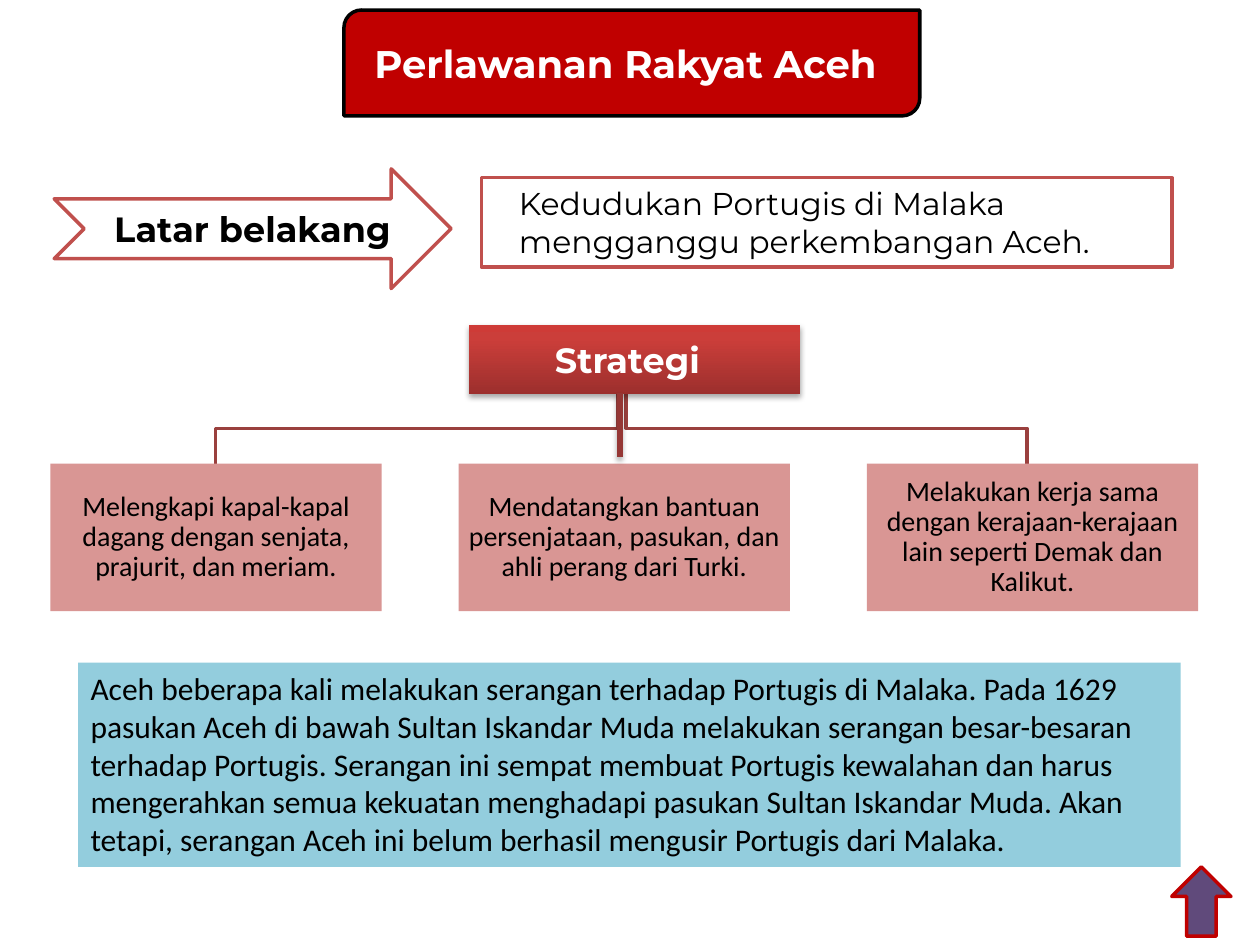
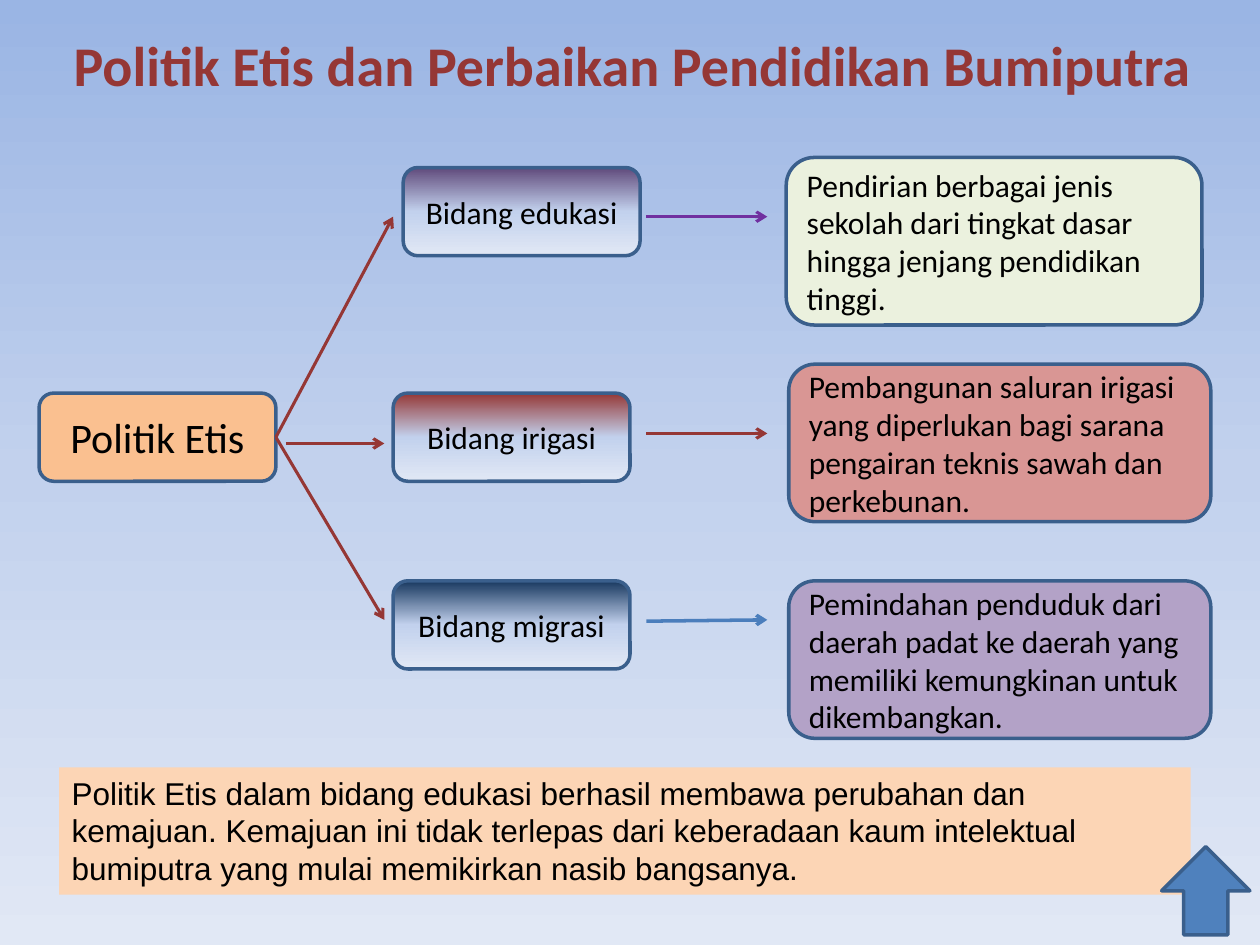
"""Build two history slides: the Aceh resistance and the Ethical Policy."""
from dataclasses import dataclass, field
from typing import Any, NamedTuple

from lxml import etree
from pptx import Presentation
from pptx.dml.color import RGBColor
from pptx.enum.shapes import MSO_CONNECTOR, MSO_SHAPE
from pptx.enum.text import MSO_ANCHOR, PP_ALIGN
from pptx.oxml.ns import qn
from pptx.util import Inches, Pt

RECT = MSO_SHAPE.RECTANGLE
ROUNDED = MSO_SHAPE.ROUNDED_RECTANGLE
DIAGONAL = MSO_SHAPE.ROUND_2_DIAG_RECTANGLE
NOTCHED = MSO_SHAPE.NOTCHED_RIGHT_ARROW
UP_ARROW = MSO_SHAPE.UP_ARROW
STRAIGHT = MSO_CONNECTOR.STRAIGHT
CENTER, LEFT = PP_ALIGN.CENTER, PP_ALIGN.LEFT
MIDDLE, TOP = MSO_ANCHOR.MIDDLE, MSO_ANCHOR.TOP
RIGHT_SIDE = 3
WIDTH, HEIGHT = Inches(10), Inches(7.5)
COLUMNS, ROWS = 100, 75
UPWARD, DOWNWARD = 90, 270


@dataclass(frozen=True)
class Theme:
    """Colours, fonts and type sizes."""

    white: str = "FFFFFF"
    black: str = "000000"
    crimson: str = "C00000"
    brick: str = "C0504D"
    branch: str = "9A403E"
    maroon: str = "953735"
    rose: str = "D99694"
    aqua: str = "93CDDD"
    plum: str = "604A7B"
    lilac: str = "B3A2C7"
    violet: str = "7030A0"
    navy: str = "17375E"
    steel: str = "3A5F8C"
    blue: str = "4F81BD"
    sky: str = "4B7EBC"
    leaf: str = "EBF1DE"
    peach: str = "FCD5B5"
    apricot: str = "FAC090"
    mist: tuple = ((50, "C2D1ED"), (100, "E1E8F5"))
    dusk: str = "9AB5E4"
    ember: tuple = ((0, "9C2F2D"), (80, "CB3E3A"), (100, "CE3B37"))
    display: str = "Montserrat"
    body: str = "Calibri"
    plain: str = "Arial"
    title: int = 32
    root: int = 24
    banner: int = 22
    heading: int = 20
    copy: int = 18
    card: int = 16


THEME = Theme()
LABEL = dict(align=CENTER, anchor=MIDDLE)
HEADING = dict(LABEL, size=THEME.heading, font=THEME.display, bold=True)
CARD = dict(LABEL, size=THEME.card, spacing=0.9, inset=0.01)


@dataclass(frozen=True)
class Box:
    """A filled shape placed on the grid, with optional text."""

    col: float
    row: float
    cols: float
    rows: float
    fill: Any
    text: str = ""
    line: str = ""
    preset: Any = RECT
    angle: int = DOWNWARD
    style: dict = field(default_factory=dict)


class Link(NamedTuple):
    """A straight line between two grid points."""

    start: tuple
    end: tuple
    color: str
    weight: float = 1.75
    arrow: bool = True


class Topic(NamedTuple):
    """A policy field, its result and the arrow between them."""

    label: Box
    result: Box
    link: Link


def x(cols: float) -> int:
    """Turn grid columns into a length."""
    return round(WIDTH * cols / COLUMNS)


def y(rows: float) -> int:
    """Turn grid rows into a length."""
    return round(HEIGHT * rows / ROWS)


def rgb(color: str) -> RGBColor:
    """Read a hexadecimal colour."""
    return RGBColor.from_string(color)


def paint(fill, owner, color, angle: int = DOWNWARD) -> None:
    """Fill with one colour or with (percent, colour) stops."""
    if isinstance(color, str):
        fill.solid()
        fill.fore_color.rgb = rgb(color)
        return
    fill.gradient()
    fill.gradient_angle = angle
    stops = next(owner.iter(qn("a:gsLst")))
    stops[:] = []
    for percent, shade in color:
        stop = etree.SubElement(stops, qn("a:gs"), pos=str(percent * 1000))
        etree.SubElement(stop, qn("a:srgbClr"), val=shade)


def outline(line, color: str, weight: float = 2) -> None:
    """Set the colour and weight of a line."""
    line.color.rgb = rgb(color)
    line.width = Pt(weight)


def cast_shadow(effects) -> None:
    """Add a soft shadow below."""
    shadow = etree.SubElement(effects, qn("a:outerShdw"), blurRad=str(Pt(3.1)),
                              dist=str(Pt(1.8)), dir="5400000", rotWithShape="0")
    color = etree.SubElement(shadow, qn("a:srgbClr"), val=THEME.black)
    etree.SubElement(color, qn("a:alpha"), val="35000")


def write(frame, text: str, *, size: int = THEME.copy, font: str = THEME.body,
          color: str = THEME.black, bold: bool = False, align=LEFT, anchor=TOP,
          spacing: float = 1, inset: float | None = None,
          margin_right: float | None = None, indent: float = 0) -> None:
    """Write one formatted paragraph into a text frame."""
    frame.word_wrap = True
    frame.vertical_anchor = anchor
    if inset is not None:
        frame.margin_left = frame.margin_right = Inches(inset)
        frame.margin_top = frame.margin_bottom = Inches(inset)
    if margin_right is not None:
        frame.margin_right = x(margin_right)
    paragraph = frame.paragraphs[0]
    paragraph.alignment = align
    paragraph.line_spacing = spacing
    if indent:
        paragraph._p.get_or_add_pPr().set("marL", str(x(indent)))
    run = paragraph.add_run()
    run.text = text
    run.font.size, run.font.name, run.font.bold = Pt(size), font, bold
    run.font.color.rgb = rgb(color)


def draw_box(slide, box: Box):
    """Draw a box and its text."""
    shape = slide.shapes.add_shape(box.preset, x(box.col), y(box.row),
                                   x(box.cols), y(box.rows))
    shape.shadow.inherit = False
    paint(shape.fill, shape.element, box.fill, box.angle)
    if box.line:
        outline(shape.line, box.line)
    else:
        shape.line.fill.background()
    if box.text:
        write(shape.text_frame, box.text, **box.style)
    return shape


def draw_link(slide, link: Link):
    """Draw a straight line or arrow and return it with its effect list."""
    connector = slide.shapes.add_connector(
        STRAIGHT, x(link.start[0]), y(link.start[1]), x(link.end[0]), y(link.end[1]))
    outline(connector.line, link.color, link.weight)
    if link.arrow:
        etree.SubElement(connector.line._get_or_add_ln(), qn("a:tailEnd"), type="arrow")
    effects = etree.SubElement(connector.element.spPr, qn("a:effectLst"))
    return connector, effects


def draw_branch(slide, stem: float, target: float) -> None:
    """Draw a stepped line from the strategy heading to a card."""
    top, bend, bottom = y(31.3), y(34), y(36.8)
    builder = slide.shapes.build_freeform(x(stem), top)
    builder.add_line_segments([(x(stem), bend), (x(target), bend), (x(target), bottom)],
                              close=False)
    branch = builder.convert_to_shape()
    branch.shadow.inherit = False
    branch.fill.background()
    outline(branch.line, THEME.branch)


def build_aceh(slide) -> None:
    """Build the slide on the resistance of Aceh."""
    banner = Box(27.3, 0.8, 45.7, 8.4, THEME.crimson, "Perlawanan Rakyat Aceh",
                 THEME.black, DIAGONAL,
                 style=dict(HEADING, size=THEME.banner, color=THEME.white, margin_right=2))
    cause = Box(38.2, 14.1, 54.8, 7.1, THEME.white,
                "Kedudukan Portugis di Malaka mengganggu perkembangan Aceh.",
                THEME.brick, style=dict(font=THEME.display, indent=2))
    background = Box(4.3, 13.4, 31.5, 9.5, THEME.white, "Latar belakang",
                     THEME.brick, NOTCHED, style=HEADING)
    for box in (banner, cause, background):
        draw_box(slide, box)

    for stem, target in ((49, 17.1), (49.7, 81.5)):
        draw_branch(slide, stem, target)
    strategy = draw_box(slide, Box(
        37.2, 25.8, 26.3, 5.5, THEME.ember, "Strategi", angle=UPWARD,
        style=dict(HEADING, color=THEME.white, inset=0.01, margin_right=1.2)))
    cast_shadow(next(strategy.element.iter(qn("a:effectLst"))))

    strategies = (
        "Melengkapi kapal-kapal dagang dengan senjata, prajurit, dan meriam.",
        "Mendatangkan bantuan persenjataan, pasukan, dan ahli perang dari Turki.",
        "Melakukan kerja sama dengan kerajaan-kerajaan lain seperti Demak dan Kalikut.",
    )
    first, step = 4, 32.4
    for place, text in enumerate(strategies):
        draw_box(slide, Box(first + place * step, 36.8, 26.3, 11.7, THEME.rose, text,
                            style=CARD))
    _, effects = draw_link(slide, Link((49.2, 31.2), (49.2, 36.3), THEME.maroon, 3, False))
    cast_shadow(effects)

    draw_box(slide, Box(
        6.2, 52.6, 87.5, 16.2, THEME.aqua,
        "Aceh beberapa kali melakukan serangan terhadap Portugis di Malaka. Pada 1629 "
        "pasukan Aceh di bawah Sultan Iskandar Muda melakukan serangan besar-besaran "
        "terhadap Portugis. Serangan ini sempat membuat Portugis kewalahan dan harus "
        "mengerahkan semua kekuatan menghadapi pasukan Sultan Iskandar Muda. Akan "
        "tetapi, serangan Aceh ini belum berhasil mengusir Portugis dari Malaka."))
    draw_box(slide, Box(93, 68.8, 4.7, 5.5, THEME.plum, line=THEME.crimson,
                        preset=UP_ARROW))


def field_box(col: float, row: float, color: str, text: str) -> Box:
    """Describe the label of one policy field."""
    return Box(col, row, 18.8, 7, ((0, color), *THEME.mist), text, THEME.steel, ROUNDED,
               style=LABEL)


def result_box(col: float, row: float, cols: float, rows: float, color: str,
               text: str) -> Box:
    """Describe the result of one policy field."""
    return Box(col, row, cols, rows, color, text, THEME.steel, ROUNDED,
               style=dict(anchor=MIDDLE))


def build_ethical_policy(slide) -> None:
    """Build the slide on the Ethical Policy."""
    paint(slide.background.fill, slide.element, ((0, THEME.dusk), *THEME.mist))
    title = slide.shapes.add_textbox(x(2.7), 0, x(95), y(10.2))
    write(title.text_frame, "Politik Etis dan Perbaikan Pendidikan Bumiputra",
          size=THEME.title, color=THEME.maroon, bold=True, **LABEL)

    topics = (
        Topic(field_box(32, 13.3, THEME.plum, "Bidang edukasi"),
              result_box(62.4, 12.5, 33, 13.3, THEME.leaf,
                         "Pendirian berbagai jenis sekolah dari tingkat dasar hingga "
                         "jenjang pendidikan tinggi."),
              Link((51.3, 17.2), (60.9, 17.2), THEME.violet)),
        Topic(field_box(31.2, 31.2, THEME.maroon, "Bidang irigasi"),
              result_box(62.6, 28.9, 33.5, 12.5, THEME.rose,
                         "Pembangunan saluran irigasi yang diperlukan bagi sarana "
                         "pengairan teknis sawah dan perkebunan."),
              Link((51.3, 34.4), (60.9, 34.4), THEME.maroon)),
        Topic(field_box(31.2, 46.1, THEME.navy, "Bidang migrasi"),
              result_box(62.6, 46.1, 33.5, 12.5, THEME.lilac,
                         "Pemindahan penduduk dari daerah padat ke daerah yang memiliki "
                         "kemungkinan untuk dikembangkan."),
              Link((51.3, 49.3), (60.9, 49.2), THEME.sky, 2)),
    )
    for topic in topics:
        draw_box(slide, topic.label)
        draw_box(slide, topic.result)
        draw_link(slide, topic.link)

    draw_box(slide, Box(
        4.7, 60.9, 89.8, 10.1, THEME.peach,
        "Politik Etis dalam bidang edukasi berhasil membawa perubahan dan kemajuan. "
        "Kemajuan ini tidak terlepas dari keberadaan kaum intelektual bumiputra yang "
        "mulai memikirkan nasib bangsanya.", style=dict(font=THEME.plain)))
    policy = draw_box(slide, Box(3.1, 31.2, 18.8, 7, THEME.apricot, "Politik Etis",
                                 THEME.steel, ROUNDED, style=dict(LABEL, size=THEME.root)))
    draw_link(slide, Link((22.7, 35.2), (30.5, 35.2), THEME.maroon))
    for end in ((30.5, 49.2), (31.2, 17.2)):
        connector, _ = draw_link(slide, Link((21.9, 34.7), end, THEME.maroon))
        connector.begin_connect(policy, RIGHT_SIDE)
    draw_box(slide, Box(92.2, 67.2, 7, 7, THEME.blue, line=THEME.steel, preset=UP_ARROW))


def main() -> None:
    """Build and save the presentation."""
    deck = Presentation()
    deck.slide_width, deck.slide_height = WIDTH, HEIGHT
    blank = deck.slide_layouts[6]
    for build in (build_aceh, build_ethical_policy):
        build(deck.slides.add_slide(blank))
    deck.save("out.pptx")


if __name__ == "__main__":
    main()
